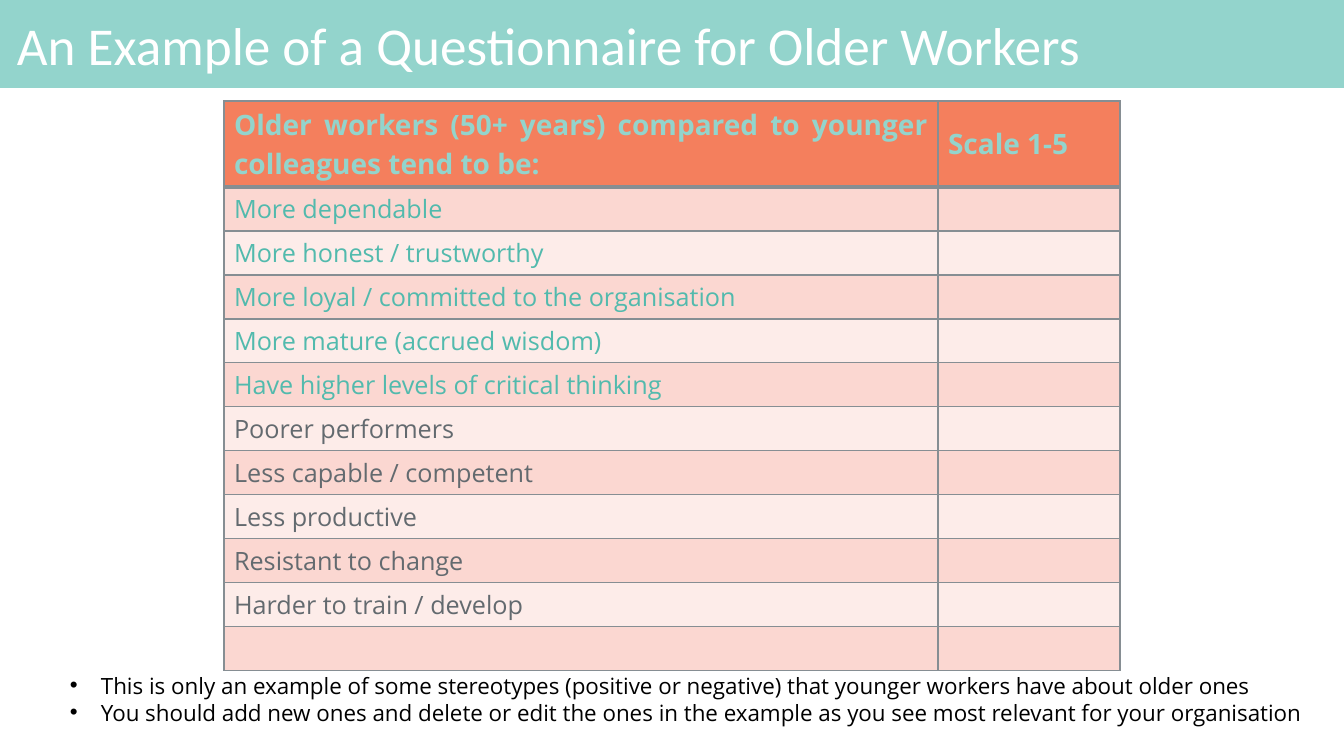
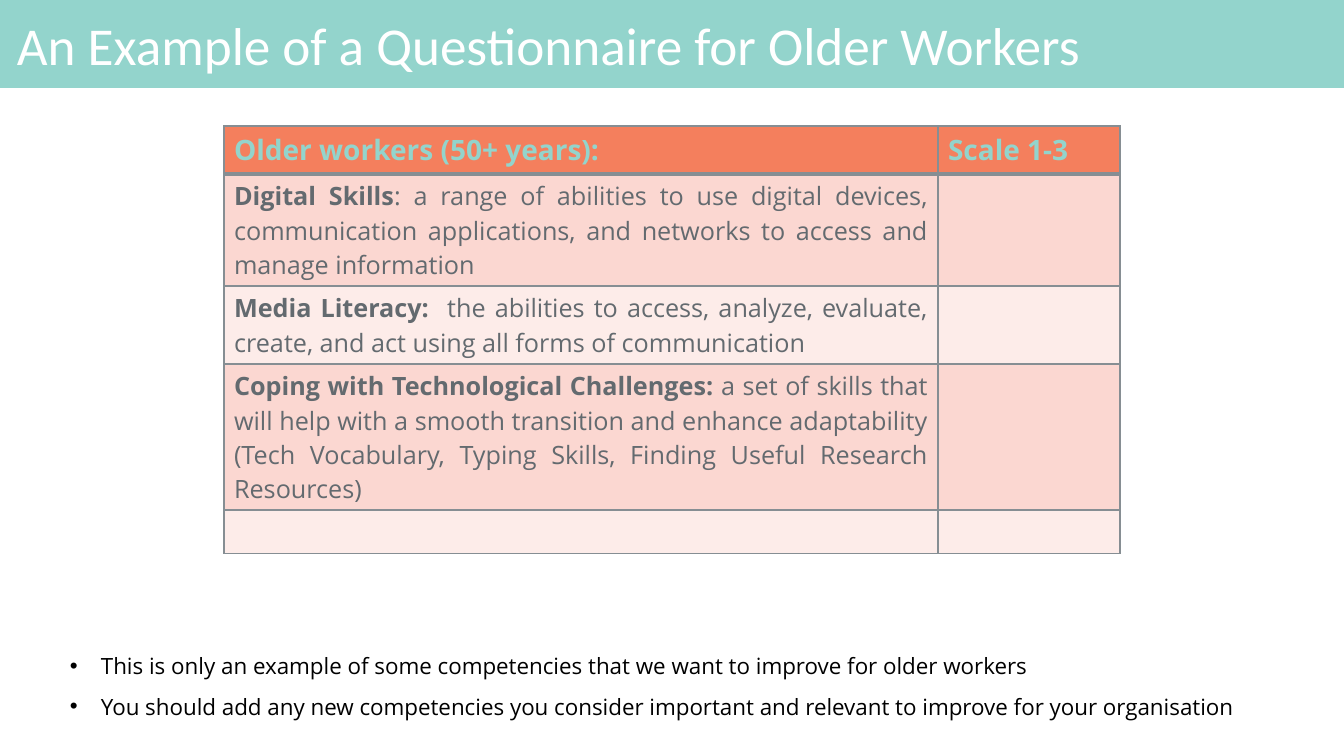
"""Build two questionnaire slides about older workers."""
from lxml.etree import SubElement
from pptx import Presentation
from pptx.dml.color import RGBColor
from pptx.enum.shapes import MSO_SHAPE
from pptx.enum.text import MSO_ANCHOR, PP_ALIGN
from pptx.oxml import parse_xml
from pptx.oxml.ns import nsdecls, qn
from pptx.util import Pt

TITLE = "An Example of a Questionnaire for Older Workers"
WHITE = RGBColor(0xFF, 0xFF, 0xFF)
BLACK = RGBColor(0, 0, 0)
MINT = RGBColor(0x93, 0xD4, 0xCC)
TEAL = RGBColor(0x52, 0xBA, 0xAD)
GREY = RGBColor(0x63, 0x6A, 0x6F)
BORDER = RGBColor(0x86, 0x8E, 0x93)
ORANGE = RGBColor(0xF4, 0x7F, 0x5D)
BANDS = RGBColor(0xFD, 0xEC, 0xE9), RGBColor(0xFB, 0xD7, 0xD1)

PX = 914400 / 100.8
SLIDE_SIZE = 1344, 756
TABLE_LEFT, COLUMNS = 224, (714, 182)
CELL_PADDING, HEADER_LINE, BODY_LINE = 10, 38, 34

TITLE_FONT = {"name": "Calibri", "size": Pt(38), "color": WHITE}
HEADER_FONT = {"name": "Open Sans", "size": Pt(20), "color": MINT, "bold": True}
BODY_FONT = {"name": "Open Sans", "size": Pt(18), "color": GREY, "bold": False}
POSITIVE_FONT = BODY_FONT | {"color": TEAL}
TERM_FONT = BODY_FONT | {"bold": True}
NOTE_FONT = {"name": "Open Sans", "size": Pt(16), "color": BLACK}

POSITIVE = [
    "More dependable",
    "More honest / trustworthy",
    "More loyal / committed to the organisation",
    "More mature (accrued wisdom)",
    "Have higher levels of critical thinking",
]
NEGATIVE = [
    "Poorer performers",
    "Less capable / competent",
    "Less productive",
    "Resistant to change",
    "Harder to train / develop",
]
COMPETENCIES = [
    (3, "Digital Skills", ": a range of abilities to use digital devices, communication "
     "applications, and networks to access and manage information"),
    (2, "Media Literacy:", "  the abilities to access, analyze, evaluate, create, "
     "and act using all forms of communication"),
    (4, "Coping with Technological Challenges:", " a set of skills that will help with a "
     "smooth transition and enhance adaptability (Tech Vocabulary, Typing Skills, "
     "Finding Useful Research Resources)"),
]
EMPTY_ROW = (1, [])

PAGES = [
    {
        "table_top": 101,
        "header": (2, "Older workers (50+ years) compared to younger colleagues tend to be:",
                   "Scale 1-5"),
        "rows": [(1, [(text, POSITIVE_FONT)]) for text in POSITIVE]
        + [(1, [(text, BODY_FONT)]) for text in NEGATIVE] + [EMPTY_ROW],
        "notes_box": (60, 667, 1261, 65),
        "line_spacing": 1.0,
        "notes": [
            "This is only an example of some stereotypes (positive or negative) that younger "
            "workers have about older ones",
            "You should add new ones and delete or edit the ones in the example as you see "
            "most relevant for your organisation",
        ],
    },
    {
        "table_top": 126,
        "header": (1, "Older workers (50+ years):", "Scale 1-3"),
        "rows": [(lines, [(term, TERM_FONT), (meaning, BODY_FONT)])
                 for lines, term, meaning in COMPETENCIES] + [EMPTY_ROW],
        "notes_box": (60, 634, 1261, 92),
        "line_spacing": 1.5,
        "notes": [
            "This is only an example of some competencies that we want to improve for older "
            "workers",
            "You should add any new competencies you consider important and relevant to "
            "improve for your organisation",
        ],
    },
]


def px(*lengths):
    return [round(length * PX) for length in lengths]


def add_spans(para, spans):
    for text, style in spans:
        span = para.add_run()
        span.text = text
        for key, value in style.items():
            if key == "color":
                span.font.color.rgb = value
            else:
                setattr(span.font, key, value)


def add_title(page):
    band = page.shapes.add_shape(MSO_SHAPE.RECTANGLE, *px(0, 0, SLIDE_SIZE[0], 88))
    band.shadow.inherit = False
    band.fill.solid()
    band.fill.fore_color.rgb = MINT
    band.line.fill.background()
    frame = page.shapes.add_textbox(*px(11, 9, 1316, 79)).text_frame
    frame.word_wrap = True
    frame.vertical_anchor = MSO_ANCHOR.MIDDLE
    for side in ("left", "top", "right", "bottom"):
        setattr(frame, f"margin_{side}", px(6)[0])
    para = frame.paragraphs[0]
    para.line_spacing = 0.9
    add_spans(para, [(TITLE, TITLE_FONT)])


def add_borders(cell, top, bottom):
    properties = cell._tc.get_or_add_tcPr()
    for index, (side, points) in enumerate(zip("LRTB", (1, 1, top, bottom))):
        properties.insert(index, parse_xml(
            f'<a:ln{side} {nsdecls("a")} w="{Pt(points)}"><a:solidFill>'
            f'<a:srgbClr val="{BORDER}"/></a:solidFill></a:ln{side}>'))


def add_table(page, top, header, rows):
    header_lines, question, scale = header
    contents = [[[(question, HEADER_FONT)], [(scale, HEADER_FONT)]]]
    contents += [[spans, []] for lines, spans in rows]
    heights = [header_lines * HEADER_LINE + CELL_PADDING]
    heights += [lines * BODY_LINE + CELL_PADDING for lines, spans in rows]
    table = page.shapes.add_table(
        len(contents), len(COLUMNS), *px(TABLE_LEFT, top, sum(COLUMNS), sum(heights))).table
    table.horz_banding = False
    for column, width in zip(table.columns, px(*COLUMNS)):
        column.width = width
    for index, (height, row) in enumerate(zip(px(*heights), contents)):
        table.rows[index].height = height
        for position, spans in enumerate(row):
            cell = table.cell(index, position)
            cell.vertical_anchor = MSO_ANCHOR.MIDDLE
            cell.fill.solid()
            cell.fill.fore_color.rgb = BANDS[index % 2] if index else ORANGE
            add_borders(cell, 3 if index == 1 else 1, 1 if index else 3)
            para = cell.text_frame.paragraphs[0]
            para.alignment = PP_ALIGN.LEFT if position else PP_ALIGN.JUSTIFY
            add_spans(para, spans)


def add_notes(page, box, line_spacing, notes):
    frame = page.shapes.add_textbox(*px(*box)).text_frame
    frame.word_wrap = True
    indent = px(31)[0]
    for index, note in enumerate(notes):
        para = frame.add_paragraph() if index else frame.paragraphs[0]
        para.line_spacing = line_spacing
        properties = para._p.get_or_add_pPr()
        properties.set("marL", str(indent))
        properties.set("indent", str(-indent))
        SubElement(properties, qn("a:buFont"), typeface="Arial")
        SubElement(properties, qn("a:buChar"), char="•")
        add_spans(para, [(note, NOTE_FONT)])


def main():
    deck = Presentation()
    deck.slide_width, deck.slide_height = px(*SLIDE_SIZE)
    for content in PAGES:
        page = deck.slides.add_slide(deck.slide_layouts[6])
        add_title(page)
        add_table(page, content["table_top"], content["header"], content["rows"])
        add_notes(page, content["notes_box"], content["line_spacing"], content["notes"])
    deck.save("out.pptx")


if __name__ == "__main__":
    main()
